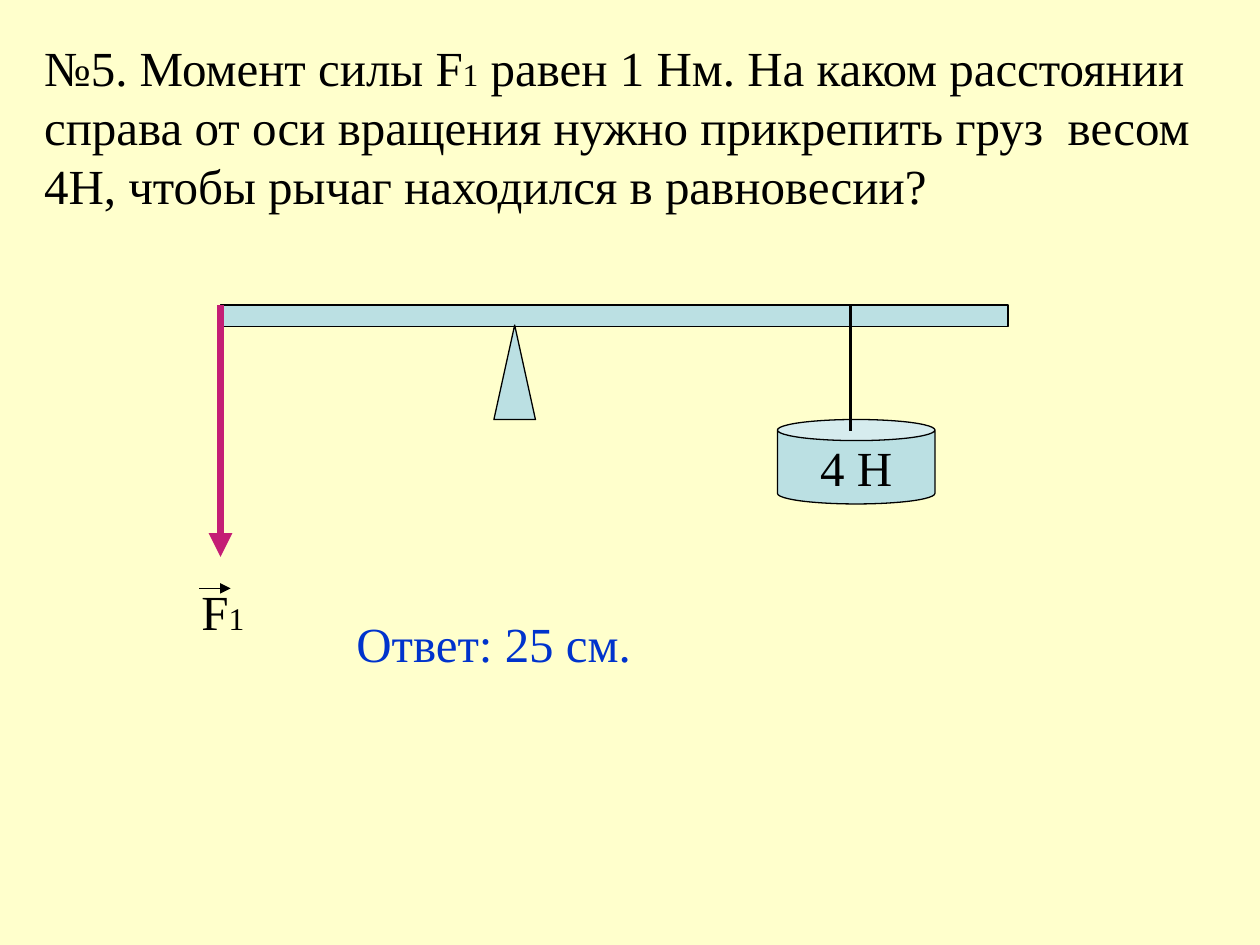
from pptx import Presentation
from pptx.dml.color import RGBColor
from pptx.enum.shapes import MSO_CONNECTOR, MSO_SHAPE
from pptx.enum.text import MSO_ANCHOR, MSO_AUTO_SIZE, PP_ALIGN
from pptx.oxml.ns import qn
from pptx.util import Inches, Pt
from lxml.etree import SubElement

COLORS = {
    "background": "FFFFCC",
    "lever": "BBE0E3",
    "ink": "000000",
    "force": "C41E75",
    "answer": "0033CC",
}


class LeverSlide:
    font_name = "Times New Roman"
    text_size = 28
    index_size = 18
    outline = 0.75

    def __init__(self, presentation):
        self.slide = presentation.slides.add_slide(presentation.slide_layouts[5])
        fill = self.slide.background.fill
        fill.solid()
        fill.fore_color.rgb = self.color("background")

    def color(self, name):
        return RGBColor.from_string(COLORS[name])

    def add_text(self, text_frame, parts, color="ink", align=PP_ALIGN.LEFT):
        paragraph = text_frame.paragraphs[0]
        paragraph.alignment = align
        for text, size in parts:
            run = paragraph.add_run()
            run.text = text
            run.font.name = self.font_name
            run.font.size = Pt(size)
            run.font.color.rgb = self.color(color)

    def title(self, left, top, width, height, parts):
        title = self.slide.shapes.title
        title.left, title.top = Inches(left), Inches(top)
        title.width, title.height = Inches(width), Inches(height)
        text_frame = title.text_frame
        text_frame.auto_size = MSO_AUTO_SIZE.NONE
        text_frame.vertical_anchor = MSO_ANCHOR.TOP
        self.add_text(text_frame, parts)

    def label(self, left, top, width, height, parts, color="ink"):
        box = self.slide.shapes.add_textbox(
            Inches(left), Inches(top), Inches(width), Inches(height))
        box.text_frame.word_wrap = False
        box.text_frame.auto_size = MSO_AUTO_SIZE.SHAPE_TO_FIT_TEXT
        self.add_text(box.text_frame, parts, color)

    def body(self, kind, left, top, width, height, text=""):
        shape = self.slide.shapes.add_shape(
            kind, Inches(left), Inches(top), Inches(width), Inches(height))
        shape.shadow.inherit = False
        shape.fill.solid()
        shape.fill.fore_color.rgb = self.color("lever")
        shape.line.color.rgb = self.color("ink")
        shape.line.width = Pt(self.outline)
        if text:
            shape.text_frame.word_wrap = False
            shape.text_frame.vertical_anchor = MSO_ANCHOR.MIDDLE
            self.add_text(shape.text_frame, [(text, self.text_size)], align=PP_ALIGN.CENTER)
        return shape

    def line(self, start, end, width, color="ink", arrow=False):
        connector = self.slide.shapes.add_connector(
            MSO_CONNECTOR.STRAIGHT,
            Inches(start[0]), Inches(start[1]), Inches(end[0]), Inches(end[1]))
        connector.line.color.rgb = self.color(color)
        connector.line.width = Pt(width)
        if arrow:
            SubElement(connector.get_or_add_ln(), qn("a:tailEnd"), type="triangle")
        SubElement(connector.element.spPr, qn("a:effectLst"))


def main():
    presentation = Presentation()
    presentation.slide_width = Inches(10)
    presentation.slide_height = Inches(7.5)

    lever = LeverSlide(presentation)
    large, small = lever.text_size, lever.index_size
    lever.title(0.25, 0.25, 9.75, 1.5, [
        ("№5. Момент силы F", large),
        ("1", small),
        (" равен 1 Нм. На каком расстоянии справа от оси вращения нужно "
         "прикрепить груз  весом 4Н, чтобы рычаг находился в равновесии?", large),
    ])

    beam_left, beam_top = 1.75, 2.42
    lever.body(MSO_SHAPE.RECTANGLE, beam_left, beam_top, 6.25, 0.17)
    lever.body(MSO_SHAPE.ISOSCELES_TRIANGLE, 3.92, 2.58, 0.33, 0.75)
    lever.line((beam_left, beam_top), (beam_left, beam_top + 2), 4.5, "force", arrow=True)

    weight = lever.body(MSO_SHAPE.CAN, 6.17, 3.33, 1.25, 0.67, "4 H")
    weight.adjustments[0] = 0.25
    lever.line((6.75, beam_top + 1), (6.75, beam_top), 2.25)

    lever.label(1.5, 4.57, 0.54, 0.57, [("F", large), ("1", small)])
    lever.line((1.58, 4.67), (1.83, 4.67), lever.outline, arrow=True)
    lever.label(2.73, 4.82, 2.39, 0.57, [("Ответ: 25 см.", large)], "answer")

    presentation.save("out.pptx")


if __name__ == "__main__":
    main()
